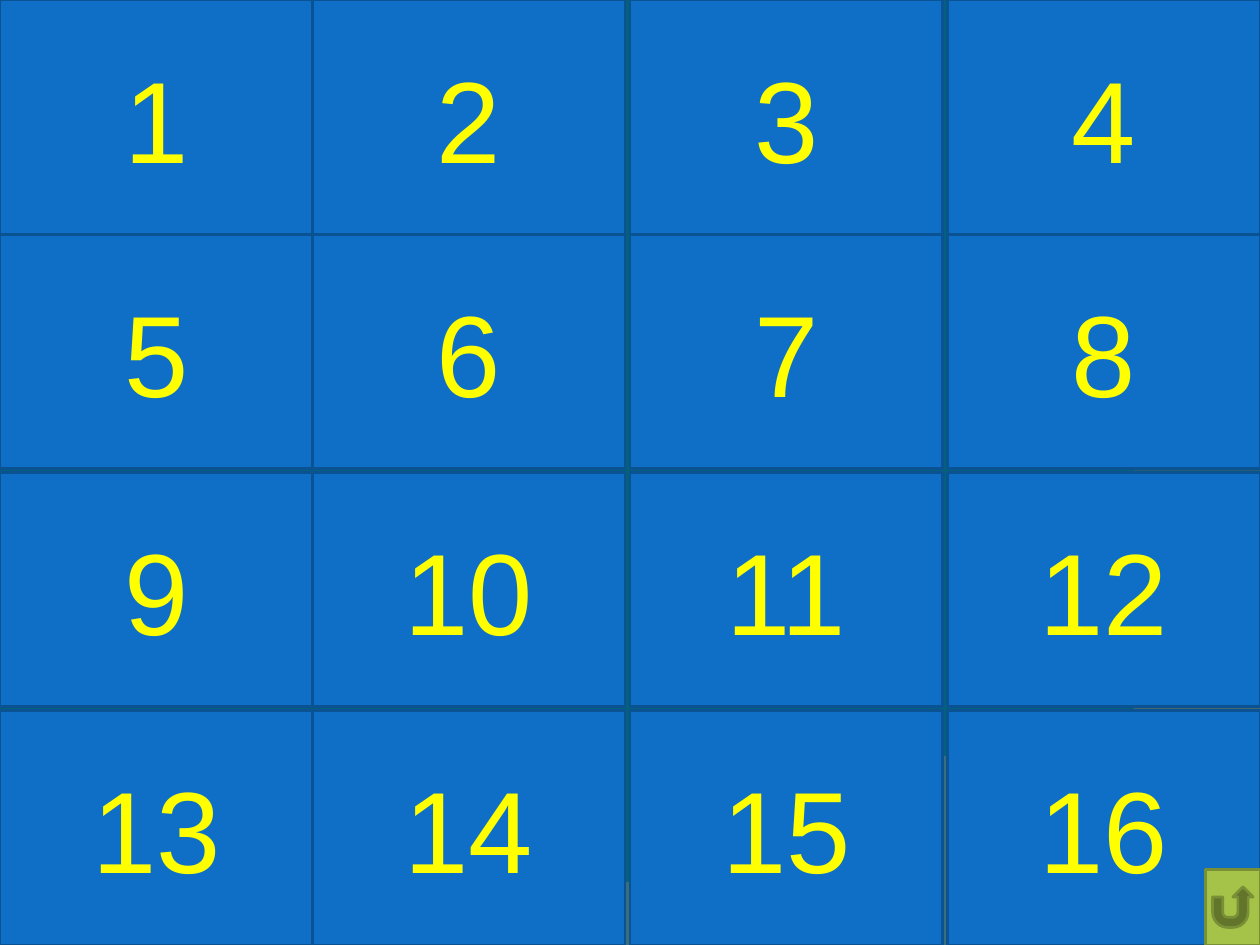
from dataclasses import dataclass
from itertools import product

from lxml.etree import SubElement
from pptx import Presentation
from pptx.dml.color import RGBColor
from pptx.enum.shapes import MSO_SHAPE
from pptx.enum.text import MSO_ANCHOR, PP_ALIGN
from pptx.oxml.ns import qn
from pptx.util import Inches, Pt


@dataclass(frozen=True)
class Theme:
    background: str = "04617B"
    tile: str = "0F6FC6"
    tile_line: str = "0B5292"
    number: str = "FFFF00"
    button: str = "A5C249"
    button_line: str = "7A9036"
    font: str = "Arial"
    number_size: int = 66
    line_width: float = 1.5


THEME = Theme()
WIDTH, HEIGHT = 10, 7.5
COLUMN_LEFTS = (0, 2.48, 5, 7.52)
ROW_TOPS = (0, 1.86, 3.75, 5.64)
TILE_SIZE = (2.48, 1.86)
BUTTON_SIZE = (0.43, 0.6)
# Each wave: straight corners, then a Bezier from the last corner; colour and opacity
WAVES = [
    dict(corners=[(0, 7.05), (0, 7.5), (10, 7.5), (10, 5.2)],
         curve=[(5.59, 7.29), (3.91, 7.19), (0, 7.05)], color="7F7F7F", opacity=45),
    dict(corners=[(8, 0), (10, 0), (10, 7.5), (8.21, 7.5)],
         curve=[(9.35, 6.19), (10.18, 3), (8, 0)], color="5E5E5E", opacity=40),
]


def rgb(color):
    return RGBColor.from_string(color)


def bezier(start, c1, c2, end, steps=40):
    for t in (i / steps for i in range(1, steps + 1)):
        u = 1 - t
        weights = (u**3, 3 * u * u * t, 3 * u * t * t, t**3)
        yield tuple(sum(w * v for w, v in zip(weights, axis))
                    for axis in zip(start, c1, c2, end))


def add_wave(slide, corners, curve, color, opacity):
    points = corners + list(bezier(corners[-1], *curve))
    builder = slide.shapes.build_freeform(*points[0], scale=Inches(1))
    builder.add_line_segments(points[1:], close=True)
    sp = builder.convert_to_shape()
    sp.shadow.inherit = False
    sp.line.fill.background()
    sp.fill.solid()
    sp.fill.fore_color.rgb = rgb(color)
    clr = sp.fill._xPr.find(".//" + qn("a:srgbClr"))
    SubElement(clr, qn("a:alpha"), val=str(opacity * 1000))


def add_box(slide, kind, position, size, fill, line):
    sp = slide.shapes.add_shape(kind, *map(Inches, position + size))
    sp.shadow.inherit = False
    sp.fill.solid()
    sp.fill.fore_color.rgb = rgb(fill)
    sp.line.color.rgb = rgb(line)
    sp.line.width = Pt(THEME.line_width)
    return sp


def add_number(sp, number):
    tf = sp.text_frame
    tf.vertical_anchor = MSO_ANCHOR.MIDDLE
    p = tf.paragraphs[0]
    p.alignment = PP_ALIGN.CENTER
    r = p.add_run()
    r.text = str(number)
    for name, value in dict(name=THEME.font, size=Pt(THEME.number_size)).items():
        setattr(r.font, name, value)
    r.font.color.rgb = rgb(THEME.number)


def main():
    prs = Presentation()
    prs.slide_width, prs.slide_height = Inches(WIDTH), Inches(HEIGHT)
    s = prs.slides.add_slide(prs.slide_layouts[6])
    s.background.fill.solid()
    s.background.fill.fore_color.rgb = rgb(THEME.background)

    for wave in WAVES:
        add_wave(s, **wave)
    for number, (top, left) in enumerate(product(ROW_TOPS, COLUMN_LEFTS), start=1):
        tile = add_box(s, MSO_SHAPE.RECTANGLE, (left, top), TILE_SIZE,
                       THEME.tile, THEME.tile_line)
        add_number(tile, number)
    corner = (WIDTH - BUTTON_SIZE[0], HEIGHT - BUTTON_SIZE[1])
    add_box(s, MSO_SHAPE.ACTION_BUTTON_RETURN, corner, BUTTON_SIZE,
            THEME.button, THEME.button_line)
    prs.save("out.pptx")


if __name__ == "__main__":
    main()
